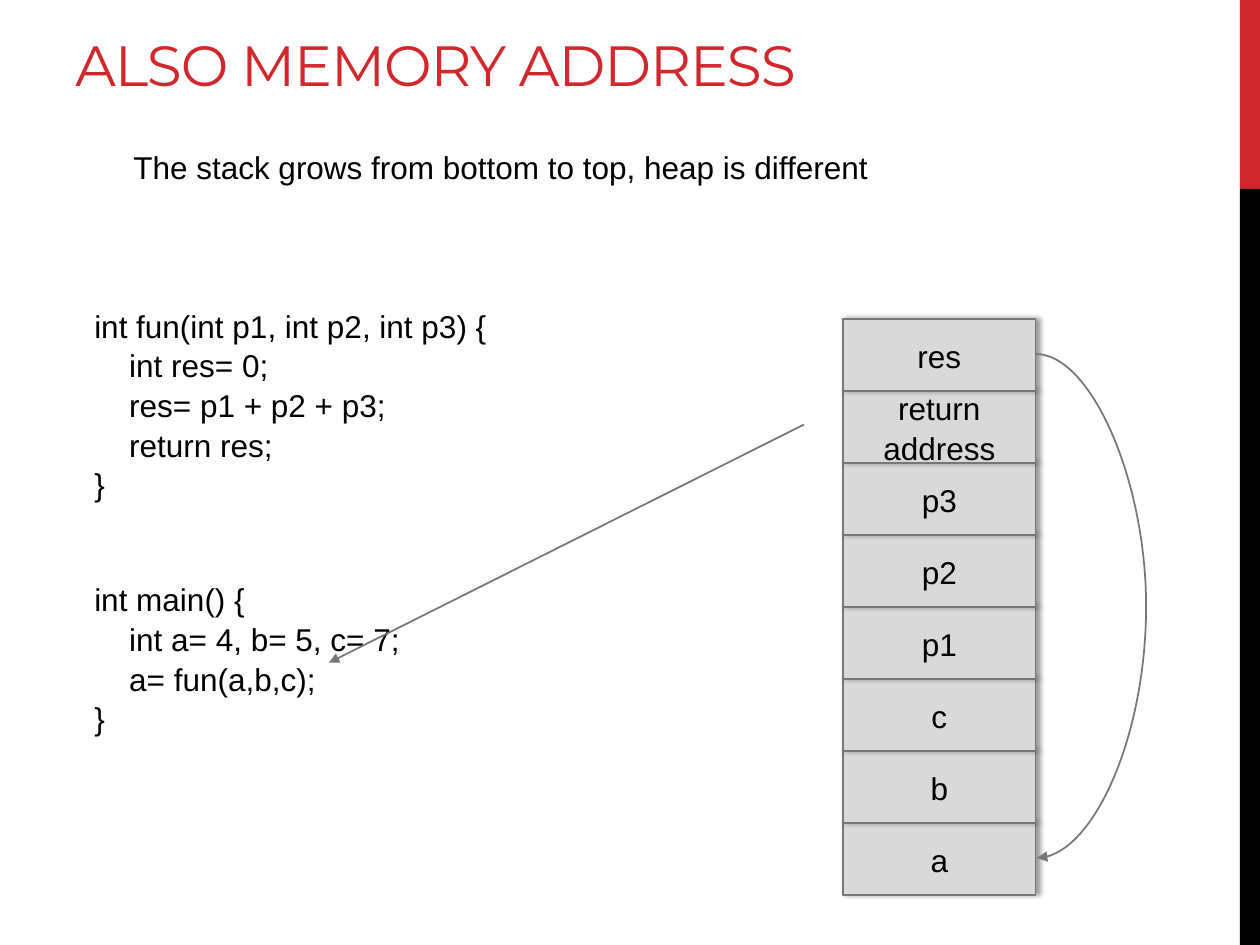
from lxml.etree import SubElement
from pptx import Presentation
from pptx.dml.color import RGBColor
from pptx.enum.shapes import MSO_CONNECTOR, MSO_SHAPE
from pptx.enum.text import MSO_ANCHOR, PP_ALIGN
from pptx.oxml.ns import qn
from pptx.util import Inches, Pt

COLORS = {"accent": "D1282E", "black": "000000", "cell": "D9D9D9", "line": "777777"}
CODE = [
    ["int fun(int p1, int p2, int p3) {", "    int res= 0;", "    res= p1 + p2 + p3;",
     "    return res;", "}"],
    ["int main() {", "    int a= 4, b= 5, c= 7;", "    a= fun(a,b,c);", "}"],
]
STACK = ["res", "return address", "p3", "p2", "p1", "c", "b", "a"]
STACK_LEFT, STACK_TOP, CELL_WIDTH, CELL_HEIGHT = 6.69, 2.53, 1.53, 4 / 7


class SlideBuilder:
    """Holds the style and the current slide, and draws each kind of element."""

    def __init__(self, slide):
        self.slide = slide
        self.font = "Arial"
        self.size = 18
        self.spacing = 1.05

    def color(self, name):
        return RGBColor.from_string(COLORS[name])

    def run(self, paragraph, text, font=None, size=None, color="black"):
        run = paragraph.add_run()
        run.text = text
        run.font.name = font or self.font
        run.font.size = Pt(size or self.size)
        run.font.color.rgb = self.color(color)
        return run

    def title(self, text, left, top, width, height):
        box = self.slide.shapes.add_textbox(*map(Inches, (left, top, width, height)))
        frame = box.text_frame
        frame.word_wrap = True
        frame.vertical_anchor = MSO_ANCHOR.BOTTOM
        run = self.run(frame.paragraphs[0], text, "Montserrat", 32.4, "accent")
        run.font._element.set("spc", "-60")

    def text(self, blocks, left, top, width, height, gap=0):
        box = self.slide.shapes.add_textbox(*map(Inches, (left, top, width, height)))
        frame = box.text_frame
        frame.word_wrap = False
        for block_index, block in enumerate(blocks):
            for line_index, line in enumerate(block):
                first = block_index == line_index == 0
                paragraph = frame.paragraphs[0] if first else frame.add_paragraph()
                paragraph.line_spacing = self.spacing
                if block_index and line_index == 0:
                    paragraph.space_before = Pt(gap)
                self.run(paragraph, line)

    def bar(self, color, left, top, width, height):
        bar = self.slide.shapes.add_shape(
            MSO_SHAPE.RECTANGLE, *map(Inches, (left, top, width, height)))
        bar.shadow.inherit = False
        bar.fill.solid()
        bar.fill.fore_color.rgb = self.color(color)
        bar.line.fill.background()
        return bar

    def cell(self, label, left, top, width, height):
        cell = self.bar("cell", left, top, width, height)
        cell.line.color.rgb = self.color("line")
        cell.line.width = Pt(1)
        effects = cell._element.spPr.find(qn("a:effectLst"))
        shadow = SubElement(effects, qn("a:outerShdw"), blurRad=str(Pt(3.1)),
                            dist=str(Pt(1.8)), dir="0", rotWithShape="0")
        tint = SubElement(shadow, qn("a:srgbClr"), val=COLORS["black"])
        SubElement(tint, qn("a:alpha"), val="40000")
        frame = cell.text_frame
        frame.word_wrap = True
        frame.vertical_anchor = MSO_ANCHOR.MIDDLE
        paragraph = frame.paragraphs[0]
        paragraph.alignment = PP_ALIGN.CENTER
        paragraph.line_spacing = self.spacing
        self.run(paragraph, label)

    def arrow(self, start, end, kind=MSO_CONNECTOR.STRAIGHT, bend=None):
        arrow = self.slide.shapes.add_connector(kind, *map(Inches, (*start, *end)))
        arrow.line.color.rgb = self.color("line")
        arrow.line.width = Pt(1)
        properties = arrow._element.spPr
        SubElement(arrow.line._get_or_add_ln(), qn("a:tailEnd"), type="triangle")
        SubElement(properties, qn("a:effectLst"))
        if bend is not None:
            guides = properties.find(qn("a:prstGeom")).get_or_add_avLst()
            SubElement(guides, qn("a:gd"), name="adj1", fmla=f"val {bend}")


def main():
    presentation = Presentation()
    presentation.slide_width = Inches(10)
    presentation.slide_height = Inches(7.5)
    builder = SlideBuilder(presentation.slides.add_slide(presentation.slide_layouts[6]))

    builder.bar("accent", 9.84, 0, 0.16, 1.5)
    builder.bar("black", 9.84, 1.5, 0.16, 6)
    builder.title("ALSO MEMORY ADDRESS", 0.5, 0.17, 9.02, 0.66)
    builder.text([["The stack grows from bottom to top, heap is different"]],
                 0.96, 1.11, 6.09, 0.4)
    builder.text(CODE, 0.65, 2.37, 3.34, 3.43, gap=43)

    for index, label in reversed(list(enumerate(STACK))):
        builder.cell(label, STACK_LEFT, STACK_TOP + index * CELL_HEIGHT,
                     CELL_WIDTH, CELL_HEIGHT)

    builder.arrow((6.38, 3.37), (2.61, 5.26))
    stack_right = STACK_LEFT + CELL_WIDTH
    builder.arrow((stack_right, 2.81), (stack_right + 0.01, 6.81),
                  MSO_CONNECTOR.CURVE, bend=8900000)
    presentation.save("out.pptx")


if __name__ == "__main__":
    main()
